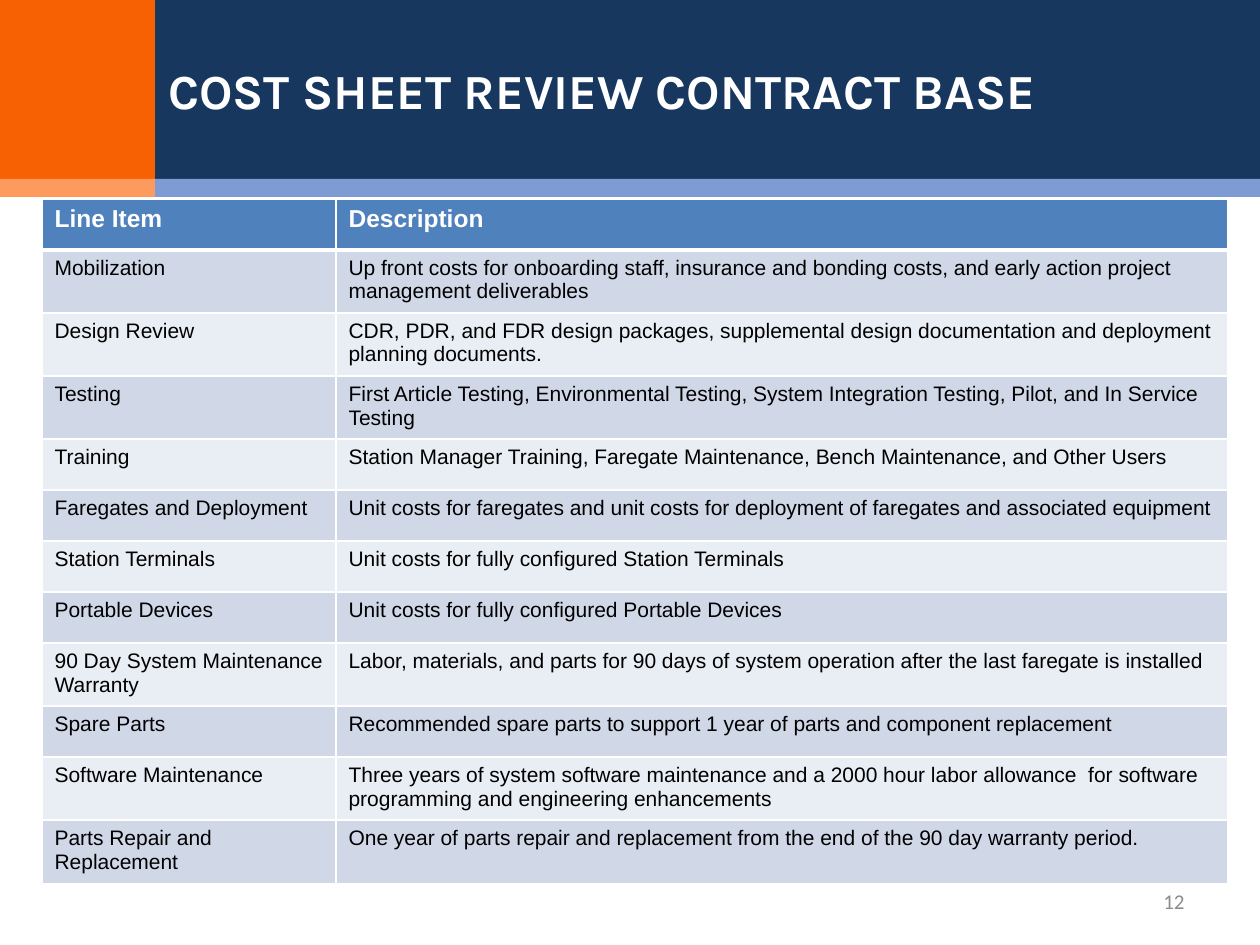
"""Build the cost sheet review slide with its table of contract line items."""
from dataclasses import dataclass

from lxml.etree import SubElement
from pptx import Presentation
from pptx.dml.color import RGBColor
from pptx.enum.shapes import MSO_SHAPE
from pptx.enum.text import MSO_ANCHOR, PP_ALIGN
from pptx.oxml.ns import qn
from pptx.util import Pt

PX = 914400 // 126


@dataclass(frozen=True)
class Theme:
    navy: str = "17375E"
    orange: str = "F76003"
    blue: str = "7F9BD3"
    peach: str = "FD9A5D"
    header: str = "4F81BD"
    bands: tuple = ("D0D8E8", "E9EDF4")
    white: str = "FFFFFF"
    black: str = "000000"
    grey: str = "8C8C8C"
    title_size: int = 28
    header_size: int = 14
    body_size: int = 12


theme = Theme()


def set_font(paragraph, name, size, color, bold=False):
    font = paragraph.font
    font.name, font.size, font.bold = name, Pt(size), bold
    font.color.rgb = RGBColor.from_string(color)


def set_borders(cell, top, bottom):
    properties = cell._tc.get_or_add_tcPr()
    sides = (("a:lnL", 1), ("a:lnR", 1), ("a:lnT", top), ("a:lnB", bottom))
    for index, (side, width) in enumerate(sides):
        line = SubElement(properties, qn(side), w=str(Pt(width)))
        fill = SubElement(line, qn("a:solidFill"))
        SubElement(fill, qn("a:srgbClr"), val=theme.white)
        properties.insert(index, line)


deck = Presentation()
deck.slide_width, deck.slide_height = 1260 * PX, 945 * PX
page = deck.slides.add_slide(deck.slide_layouts[6])

bands = [
    (155, 0, 1105, 180, theme.navy),
    (0, 0, 155, 180, theme.orange),
    (155, 179, 1105, 18, theme.blue),
    (0, 179, 155, 18, theme.peach),
]
for left, top, width, height, color in bands:
    band = page.shapes.add_shape(
        MSO_SHAPE.RECTANGLE, left * PX, top * PX, width * PX, height * PX)
    band.shadow.inherit = False
    band.fill.solid()
    band.fill.fore_color.rgb = RGBColor.from_string(color)
    band.line.fill.background()

labels = [
    ("12", 903, 876, 294, 50, PP_ALIGN.RIGHT,
     ("Calibri", theme.body_size, theme.grey)),
    ("COST SHEET REVIEW CONTRACT BASE", 156, 0, 1104, 179, PP_ALIGN.JUSTIFY,
     ("Karla", theme.title_size, theme.white, True)),
]
for text, left, top, width, height, alignment, font in labels:
    box = page.shapes.add_textbox(left * PX, top * PX, width * PX, height * PX)
    box.text_frame.word_wrap = True
    box.text_frame.vertical_anchor = MSO_ANCHOR.MIDDLE
    paragraph = box.text_frame.paragraphs[0]
    paragraph.text = text
    paragraph.alignment = alignment
    set_font(paragraph, *font)

line_items = [
    ("Line Item", "Description"),
    ("Mobilization",
     "Up front costs for onboarding staff, insurance and bonding costs, "
     "and early action project management deliverables"),
    ("Design Review",
     "CDR, PDR, and FDR design packages, supplemental design documentation "
     "and deployment planning documents."),
    ("Testing",
     "First Article Testing, Environmental Testing, System Integration "
     "Testing, Pilot, and In Service Testing"),
    ("Training",
     "Station Manager Training, Faregate Maintenance, Bench Maintenance, "
     "and Other Users"),
    ("Faregates and Deployment",
     "Unit costs for faregates and unit costs for deployment of faregates "
     "and associated equipment"),
    ("Station Terminals", "Unit costs for fully configured Station Terminals"),
    ("Portable Devices", "Unit costs for fully configured Portable Devices"),
    ("90 Day System Maintenance Warranty",
     "Labor, materials, and parts for 90 days of system operation after "
     "the last faregate is installed"),
    ("Spare Parts",
     "Recommended spare parts to support 1 year of parts and component "
     "replacement"),
    ("Software Maintenance",
     "Three years of system software maintenance and a 2000 hour labor "
     "allowance  for software programming and engineering enhancements"),
    ("Parts Repair and Replacement",
     "One year of parts repair and replacement from the end of the 90 day "
     "warranty period."),
]
row_height = 51
table = page.shapes.add_table(
    len(line_items), 2, 42 * PX, 199 * PX, 1186 * PX,
    row_height * len(line_items) * PX).table
for column, width in zip(table.columns, (294, 892)):
    column.width = width * PX
for row, texts in enumerate(line_items):
    table.rows[row].height = row_height * PX
    is_header = row == 0
    color = theme.header if is_header else theme.bands[(row - 1) % 2]
    for column, text in enumerate(texts):
        cell = table.cell(row, column)
        cell.fill.solid()
        cell.fill.fore_color.rgb = RGBColor.from_string(color)
        set_borders(cell, 3 if row == 1 else 1, 3 if is_header else 1)
        paragraph = cell.text_frame.paragraphs[0]
        paragraph.text = text
        if is_header:
            set_font(paragraph, "Arial", theme.header_size, theme.white, True)
        else:
            set_font(paragraph, "Arial", theme.body_size, theme.black)

deck.save("out.pptx")
